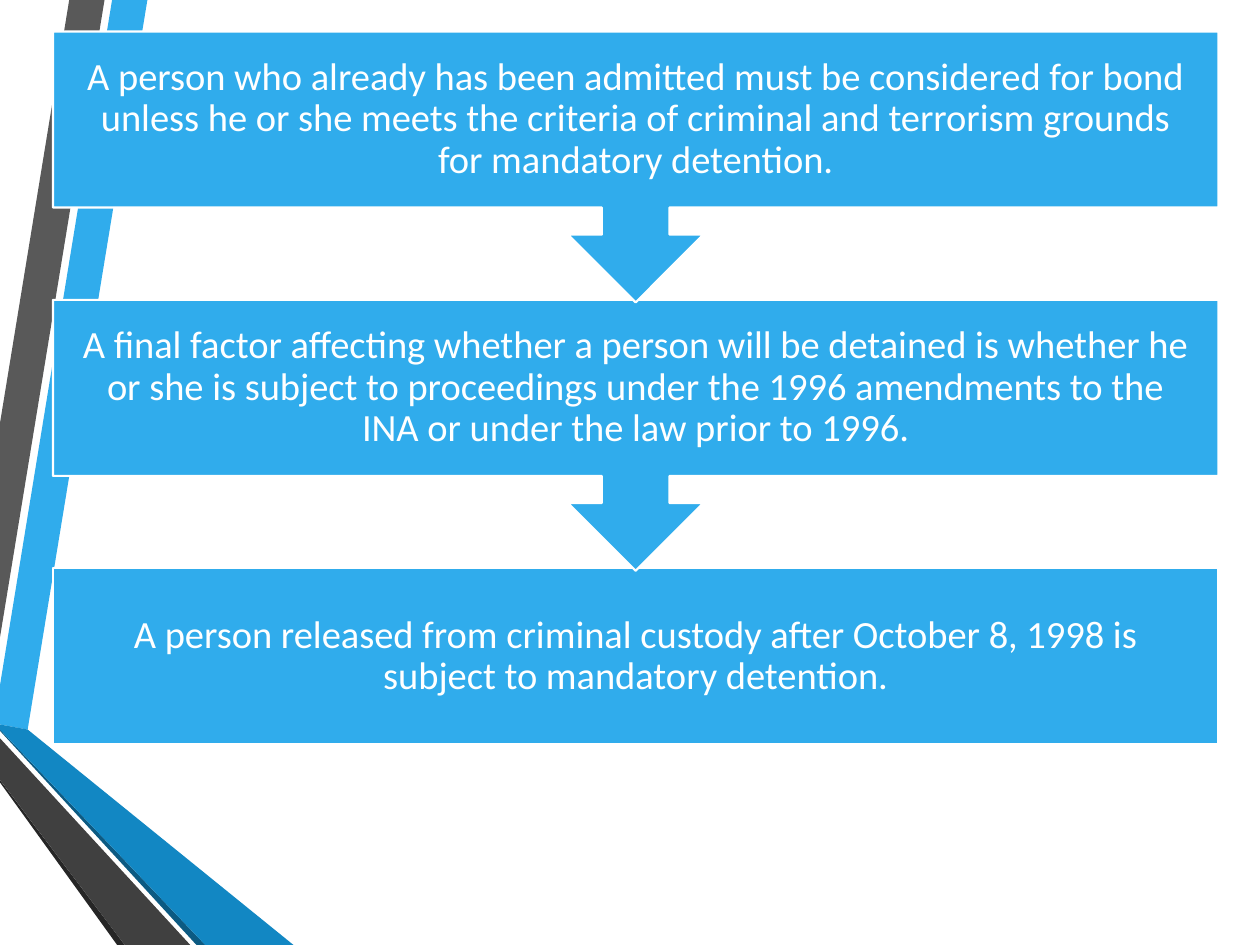
from pptx import Presentation
from pptx.dml.color import RGBColor
from pptx.enum.shapes import MSO_SHAPE
from pptx.enum.text import MSO_ANCHOR, PP_ALIGN
from pptx.util import Inches, Pt

RECTANGLE = MSO_SHAPE.RECTANGLE
CALLOUT = MSO_SHAPE.DOWN_ARROW_CALLOUT
MIDDLE = MSO_ANCHOR.MIDDLE
CENTER = PP_ALIGN.CENTER

COLORS = {
    "blue": "30ACEC", "mid_blue": "1287C3", "deep_blue": "0C5A82",
    "gray": "595959", "dark_gray": "404040", "charcoal": "262626",
    "white": "FFFFFF",
}

STEPS = [
    "A person who already has been admitted must be considered for bond unless he or she "
    "meets the criteria of criminal and terrorism grounds for mandatory detention.",
    "A final factor affecting whether a person will be detained is whether he or she is "
    "subject to proceedings under the 1996 amendments to the INA or under the law prior to 1996.",
    "A person released from criminal custody after October 8, 1998 is subject to "
    "mandatory detention.",
]

# Ribbon outlines in inches, back to front
RIBBONS = [
    ("blue", [(0, 5.44), (0, 5.75), (0.22, 5.79), (1.17, 0), (0.89, 0)]),
    ("gray", [(0.83, 0), (0.55, 0), (0, 3.36), (0, 5.06)]),
    ("charcoal", [(0, 6.19), (0, 6.21), (0.93, 7.5), (0.99, 7.5)]),
    ("deep_blue", [(0, 5.79), (0, 5.8), (1.56, 7.5), (1.63, 7.5)]),
    ("mid_blue", [(0, 5.79), (1.63, 7.5), (2.33, 7.5), (0.22, 5.79), (0, 5.75)]),
    ("dark_gray", [(0, 6.19), (0.99, 7.5), (1.51, 7.5), (0, 5.86)]),
]

# Flow grid in inches
LEFT, TOP, WIDTH = 0.42, 0.25, 9.25
BOX_HEIGHT, CALLOUT_HEIGHT, ROW_PITCH = 1.4, 2.15, 2.13
INSET = 0.17


def color(name):
    return RGBColor.from_string(COLORS[name])


def fill_shape(shape, name):
    shape.shadow.inherit = False
    shape.fill.solid()
    shape.fill.fore_color.rgb = color(name)


def add_ribbon(slide, name, points):
    corners = [(Inches(x), Inches(y)) for x, y in points]
    builder = slide.shapes.build_freeform(*corners[0])
    builder.add_line_segments(corners[1:], close=True)
    ribbon = builder.convert_to_shape()
    fill_shape(ribbon, name)
    ribbon.line.fill.background()


def add_step(slide, row, text):
    is_last = row == len(STEPS) - 1
    kind, height = (RECTANGLE, BOX_HEIGHT) if is_last else (CALLOUT, CALLOUT_HEIGHT)
    step = slide.shapes.add_shape(
        kind, Inches(LEFT), Inches(TOP + row * ROW_PITCH), Inches(WIDTH), Inches(height))
    fill_shape(step, "blue")
    step.line.color.rgb = color("white")
    step.line.width = Pt(1.25)

    frame = step.text_frame
    frame.word_wrap = True
    frame.vertical_anchor = MIDDLE
    frame.margin_left = frame.margin_right = Inches(INSET)
    frame.margin_top = frame.margin_bottom = Inches(INSET)
    frame.text = text
    paragraph = frame.paragraphs[0]
    paragraph.alignment = CENTER
    paragraph.line_spacing = 0.9
    font = paragraph.runs[0].font
    font.name, font.size = "Calibri", Pt(22)
    font.color.rgb = color("white")


def main():
    presentation = Presentation()
    presentation.slide_width, presentation.slide_height = Inches(10), Inches(7.5)
    slide = presentation.slides.add_slide(presentation.slide_layouts[6])

    # Corner ribbons
    for name, points in RIBBONS:
        add_ribbon(slide, name, points)

    # Flow steps, last one first so each arrow tip lies over the next box
    for row, text in reversed(list(enumerate(STEPS))):
        add_step(slide, row, text)

    presentation.save("out.pptx")


if __name__ == "__main__":
    main()
